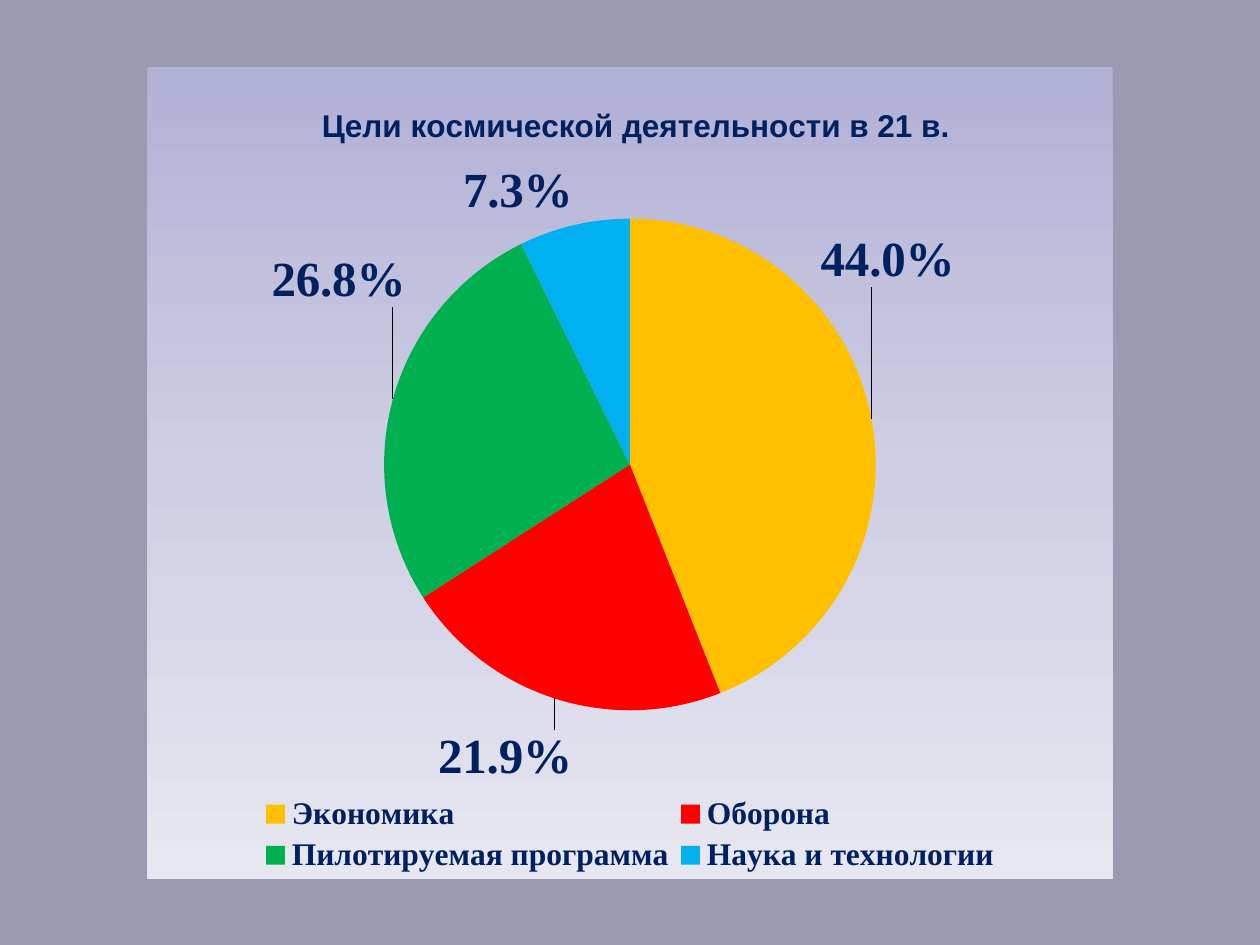
from lxml import etree
from pptx import Presentation
from pptx.chart.data import CategoryChartData
from pptx.dml.color import RGBColor
from pptx.enum.chart import XL_CHART_TYPE, XL_LABEL_POSITION, XL_LEGEND_POSITION
from pptx.oxml import parse_xml
from pptx.oxml.ns import nsdecls
from pptx.util import Inches, Pt

NAVY = "002060"
GOALS = [  # name, share, slice colour, label offset as a fraction of the chart
    ("Экономика", 0.44, "FFC000", (-0.06, -0.16)),
    ("Оборона", 0.219, "FF0000", (0.02, 0.03)),
    ("Пилотируемая программа", 0.268, "00B050", (0.02, -0.11)),
    ("Наука и технологии", 0.073, "00B0F0", None),
]
GRADIENT = [(0, "B2B1D6"), (50, "CFCEE4"), (100, "E7E7F1")]


def rgb(value):
    return RGBColor.from_string(value)


def manual_layout(x, y, w=None, h=None, inner=False, edge=True):
    parts = ['<c:layoutTarget val="inner"/>'] if inner else []
    if edge:
        parts += ['<c:xMode val="edge"/>', '<c:yMode val="edge"/>']
    sizes = (("x", x), ("y", y), ("w", w), ("h", h))
    parts += [f'<c:{tag} val="{size}"/>' for tag, size in sizes if size is not None]
    return parse_xml(f'<c:layout {nsdecls("c")}><c:manualLayout>{"".join(parts)}'
                     '</c:manualLayout></c:layout>')


class ChartSlide:
    def __init__(self, prs, background):
        self.slide = prs.slides.add_slide(prs.slide_layouts[6])
        fill = self.slide.background.fill
        fill.solid()
        fill.fore_color.rgb = rgb(background)

    def style(self, font, size, name="Times New Roman"):
        font.name, font.size, font.bold = name, Pt(size), True
        font.color.rgb = rgb(NAVY)

    def place(self, element, layout, after):
        for old in element.xpath("./c:layout"):
            element.remove(old)
        anchors = element.xpath(f"./{after}") if after else []
        if anchors:
            anchors[0].addnext(layout)
        else:
            element.insert(0, layout)

    def pie(self, left, top, width, height, goals):
        data = CategoryChartData(number_format="0.0%")
        data.categories = [goal[0] for goal in goals]
        data.add_series("Series 1", [goal[1] for goal in goals])
        chart = self.slide.shapes.add_chart(
            XL_CHART_TYPE.PIE, Inches(left), Inches(top),
            Inches(width), Inches(height), data).chart
        chart.font.name, chart.font.size = "Arial", Pt(10)
        chart.font.color.rgb = rgb("FFFFFF")
        plot = chart.plots[0]
        plot.vary_by_categories = True
        self.place(chart.element.xpath(".//c:plotArea")[0],
                   manual_layout(0.245, 0.187, 0.51, 0.605, inner=True), None)
        self.slices(plot.series[0], goals)
        return chart

    def slices(self, shares, goals):
        labels = shares.data_labels
        labels.show_value = True
        labels.number_format, labels.number_format_is_linked = "0.0%", False
        labels.position = XL_LABEL_POSITION.OUTSIDE_END
        self.style(labels.font, 28)
        for index, (_, _, color, offset) in enumerate(goals):
            point = shares.points[index]
            point.format.fill.solid()
            point.format.fill.fore_color.rgb = rgb(color)
            if offset:
                point.data_label.position = XL_LABEL_POSITION.OUTSIDE_END
                self.style(point.data_label.font, 28)
                label = shares._element.xpath(f".//c:dLbl[c:idx/@val='{index}']")[0]
                self.place(label, manual_layout(*offset, edge=False), "c:idx")

    def title(self, chart, text):
        frame = chart.chart_title.text_frame
        frame.text = text
        self.style(frame.paragraphs[0].runs[0].font, 18, "Arial")
        self.place(chart.element.xpath(".//c:title")[0],
                   manual_layout(0.175, 0.04), "c:tx")

    def legend(self, chart):
        chart.has_legend = True
        chart.legend.position = XL_LEGEND_POSITION.BOTTOM
        chart.legend.include_in_layout = False
        self.style(chart.legend.font, 18)
        self.place(chart.element.xpath(".//c:legend")[0],
                   manual_layout(0.11, 0.89, 0.78, 0.11), "c:legendPos")

    def gradient(self, chart, stops):
        stop_list = "".join(f'<a:gs pos="{pos * 1000}"><a:srgbClr val="{color}"/></a:gs>'
                            for pos, color in stops)
        area = parse_xml(f'<c:spPr {nsdecls("c", "a")}><a:gradFill><a:gsLst>{stop_list}'
                         '</a:gsLst><a:lin ang="5400000" scaled="0"/></a:gradFill></c:spPr>')
        etree.SubElement(etree.SubElement(area, area.tag.replace("chart}spPr", "main}ln")),
                         area.tag.replace("chart}spPr", "main}noFill"))
        chart.element.xpath("./c:chart")[0].addnext(area)


def main():
    prs = Presentation()
    prs.slide_width, prs.slide_height = Inches(10), Inches(7.5)
    page = ChartSlide(prs, "9B9AB3")

    # Pie of space programme goals
    goals_chart = page.pie(1.17, 0.53, 7.66, 6.45, GOALS)
    page.title(goals_chart, "Цели космической деятельности в 21 в.")
    page.legend(goals_chart)
    page.gradient(goals_chart, GRADIENT)

    prs.save("out.pptx")


if __name__ == "__main__":
    main()
